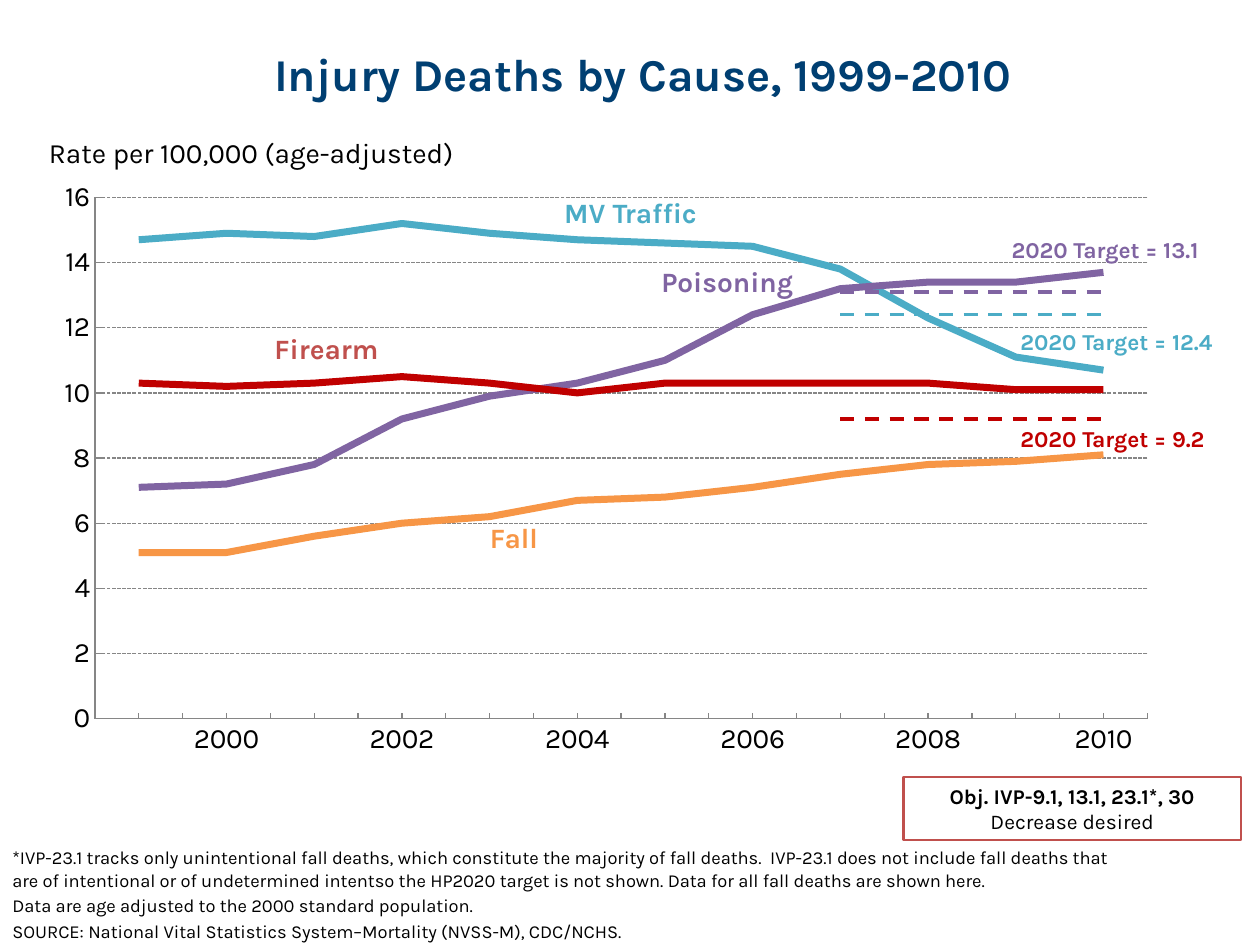
import pptx
import pptx.chart.data
import pptx.dml.color
import pptx.enum.chart
import pptx.enum.dml
import pptx.enum.shapes
import pptx.enum.text
import pptx.oxml
import pptx.util
from pptx.util import Inches

COLORS = {
    "title": "003F72", "text": "000000", "axis": "868686",
    "traffic": "4BACC6", "poisoning": "8064A2", "firearm": "C00000",
    "fall": "F79646", "firearm_label": "C0504D",
}
FONT = "Karla"
YEARS = range(1999, 2011)
RATES = {
    "traffic": [14.7, 14.9, 14.8, 15.2, 14.9, 14.7, 14.6, 14.5, 13.8, 12.3, 11.1, 10.7],
    "poisoning": [7.1, 7.2, 7.8, 9.2, 9.9, 10.3, 11, 12.4, 13.2, 13.4, 13.4, 13.7],
    "firearm": [10.3, 10.2, 10.3, 10.5, 10.3, 10, 10.3, 10.3, 10.3, 10.3, 10.1, 10.1],
    "fall": [5.1, 5.1, 5.6, 6, 6.2, 6.7, 6.8, 7.1, 7.5, 7.8, 7.9, 8.1],
}
TARGETS = {"traffic": 12.4, "poisoning": 13.1, "firearm": 9.2}
TARGET_YEARS = 4
PLOT_AREA = {"x": 0.051, "y": 0.089, "w": 0.92, "h": 0.805}
# text, left, top, width, height, size, bold, colour
LABELS = [
    ("Rate per 100,000 (age-adjusted)", 0.29, 1.03, 3.83, 0.37, 16, False, "text"),
    ("MV Traffic", 4.38, 1.5, 1.44, 0.37, 16, True, "traffic"),
    ("Poisoning", 5.15, 2.05, 1.44, 0.37, 16, True, "poisoning"),
    ("Firearm", 2.08, 2.58, 1.25, 0.37, 16, True, "firearm_label"),
    ("Fall", 3.79, 4.08, 0.79, 0.37, 16, True, "fall"),
    ("2020 Target = 13.1", 7.93, 1.82, 1.99, 0.32, 13, True, "poisoning"),
    ("2020 Target = 12.4", 8, 2.55, 1.99, 0.32, 13, True, "traffic"),
    ("2020 Target = 9.2", 8, 3.32, 1.97, 0.32, 13, True, "firearm"),
]
NOTES = [
    "*IVP-23.1 tracks only unintentional fall deaths, which constitute the majority of "
    "fall deaths.  IVP-23.1 does not include fall deaths that are of intentional or of "
    "undetermined intentso the HP2020 target is not shown. Data for all fall deaths are "
    "shown here.",
    "Data are age adjusted to the 2000 standard population.",
    "SOURCE: National Vital Statistics System–Mortality (NVSS-M), CDC/NCHS.",
]


def rgb(name):
    return pptx.dml.color.RGBColor.from_string(COLORS[name])


def style_font(font, size, color="text", bold=False):
    font.name = FONT
    font.size = pptx.util.Pt(size)
    font.bold = bold
    font.color.rgb = rgb(color)


def style_line(line, color, width, dash=None):
    line.color.rgb = rgb(color)
    line.width = pptx.util.Pt(width)
    if dash is not None:
        line.dash_style = dash


def write(frame, text, first=False, size=12, color="text", bold=False,
          align=pptx.enum.text.PP_ALIGN.LEFT, before=0):
    """Fill the first paragraph of the frame, or append a new one."""
    para = frame.paragraphs[0] if first else frame.add_paragraph()
    para.alignment = align
    if before:
        para.space_before = pptx.util.Pt(before)
    span = para.add_run()
    span.text = text
    style_font(span.font, size, color, bold)


def add_text_frame(page, left, top, width, height):
    box = page.shapes.add_textbox(Inches(left), Inches(top), Inches(width), Inches(height))
    box.text_frame.word_wrap = True
    return box.text_frame


def add_title(page, text):
    title = page.shapes.title
    title.left, title.top = Inches(0.52), Inches(0.25)
    title.width, title.height = Inches(9.17), Inches(0.67)
    title.text_frame.vertical_anchor = pptx.enum.text.MSO_ANCHOR.MIDDLE
    write(title.text_frame, text, first=True, size=26, color="title", bold=True,
          align=pptx.enum.text.PP_ALIGN.CENTER)


def set_plot_area(chart):
    """Pin the inner plot area to fixed fractions of the chart."""
    plot_area = chart._chartSpace.chart.plotArea
    for old in plot_area.findall(pptx.oxml.ns.qn("c:layout")):
        plot_area.remove(old)
    sizes = "".join(f'<c:{key} val="{value}"/>' for key, value in PLOT_AREA.items())
    plot_area.insert(0, pptx.oxml.parse_xml(
        f'<c:layout {pptx.oxml.ns.nsdecls("c")}><c:manualLayout>'
        '<c:layoutTarget val="inner"/><c:xMode val="edge"/><c:yMode val="edge"/>'
        f'{sizes}</c:manualLayout></c:layout>'))


def style_axes(chart):
    marks = pptx.enum.chart.XL_TICK_MARK
    years, rates = chart.category_axis, chart.value_axis
    for axis in (years, rates):
        style_font(axis.tick_labels.font, 16)
        style_line(axis.format.line, "axis", 0.75)
    years.has_major_gridlines = False
    years.major_tick_mark, years.minor_tick_mark = marks.NONE, marks.INSIDE
    rates.major_tick_mark, rates.minor_tick_mark = marks.INSIDE, marks.NONE
    rates.minimum_scale, rates.maximum_scale, rates.major_unit = 0, 16, 2
    rates.tick_labels.number_format = "0"
    rates.tick_labels.number_format_is_linked = False
    rates.has_major_gridlines = True
    style_line(rates.major_gridlines.format.line, "axis", 0.75,
               pptx.enum.dml.MSO_LINE.SQUARE_DOT)


def add_rate_chart(page):
    data = pptx.chart.data.CategoryChartData()
    data.categories = [str(year) if year % 2 == 0 else "" for year in YEARS]
    gap = [None] * (len(YEARS) - TARGET_YEARS)
    lines = [(cause, values, 4, None) for cause, values in RATES.items()]
    lines += [(cause, gap + [target] * TARGET_YEARS, 2, pptx.enum.dml.MSO_LINE.DASH)
              for cause, target in TARGETS.items()]
    for number, (_, values, _, _) in enumerate(lines, 1):
        data.add_series(f"Series {number}", values)
    chart = page.shapes.add_chart(
        pptx.enum.chart.XL_CHART_TYPE.LINE,
        Inches(0.29), Inches(1.11), Inches(9.08), Inches(5.14), data).chart
    chart.has_legend = False
    chart.has_title = False
    style_font(chart.font, 18)
    chart.font.name = "Calibri"
    chart.plots[0].vary_by_categories = False
    for series, (cause, _, width, dash) in zip(chart.plots[0].series, lines):
        series.smooth = False
        series.marker.style = pptx.enum.chart.XL_MARKER_STYLE.NONE
        style_line(series.format.line, cause, width, dash)
    style_axes(chart)
    set_plot_area(chart)


def add_objective_box(page):
    box = page.shapes.add_shape(
        pptx.enum.shapes.MSO_SHAPE.RECTANGLE,
        Inches(7.17), Inches(6.17), Inches(2.68), Inches(0.5))
    box.shadow.inherit = False
    box.fill.background()
    style_line(box.line, "firearm_label", 1.25)
    box.text_frame.vertical_anchor = pptx.enum.text.MSO_ANCHOR.MIDDLE
    center = pptx.enum.text.PP_ALIGN.CENTER
    write(box.text_frame, "Obj. IVP-9.1, 13.1, 23.1*, 30", first=True, bold=True, align=center)
    write(box.text_frame, "Decrease desired", align=center)


def add_notes(page):
    frame = add_text_frame(page, 0, 6.67, 8.92, 0.75)
    for index, note in enumerate(NOTES):
        write(frame, note, first=index == 0, size=10.5, before=2 if index else 0)


def main():
    deck = pptx.Presentation()
    deck.slide_width, deck.slide_height = Inches(10), Inches(7.5)
    page = deck.slides.add_slide(deck.slide_layouts[5])
    add_title(page, "Injury Deaths by Cause, 1999-2010")
    add_rate_chart(page)
    for text, left, top, width, height, size, bold, color in LABELS:
        frame = add_text_frame(page, left, top, width, height)
        write(frame, text, first=True, size=size, bold=bold, color=color)
    add_objective_box(page)
    add_notes(page)
    deck.save("out.pptx")


if __name__ == "__main__":
    main()
